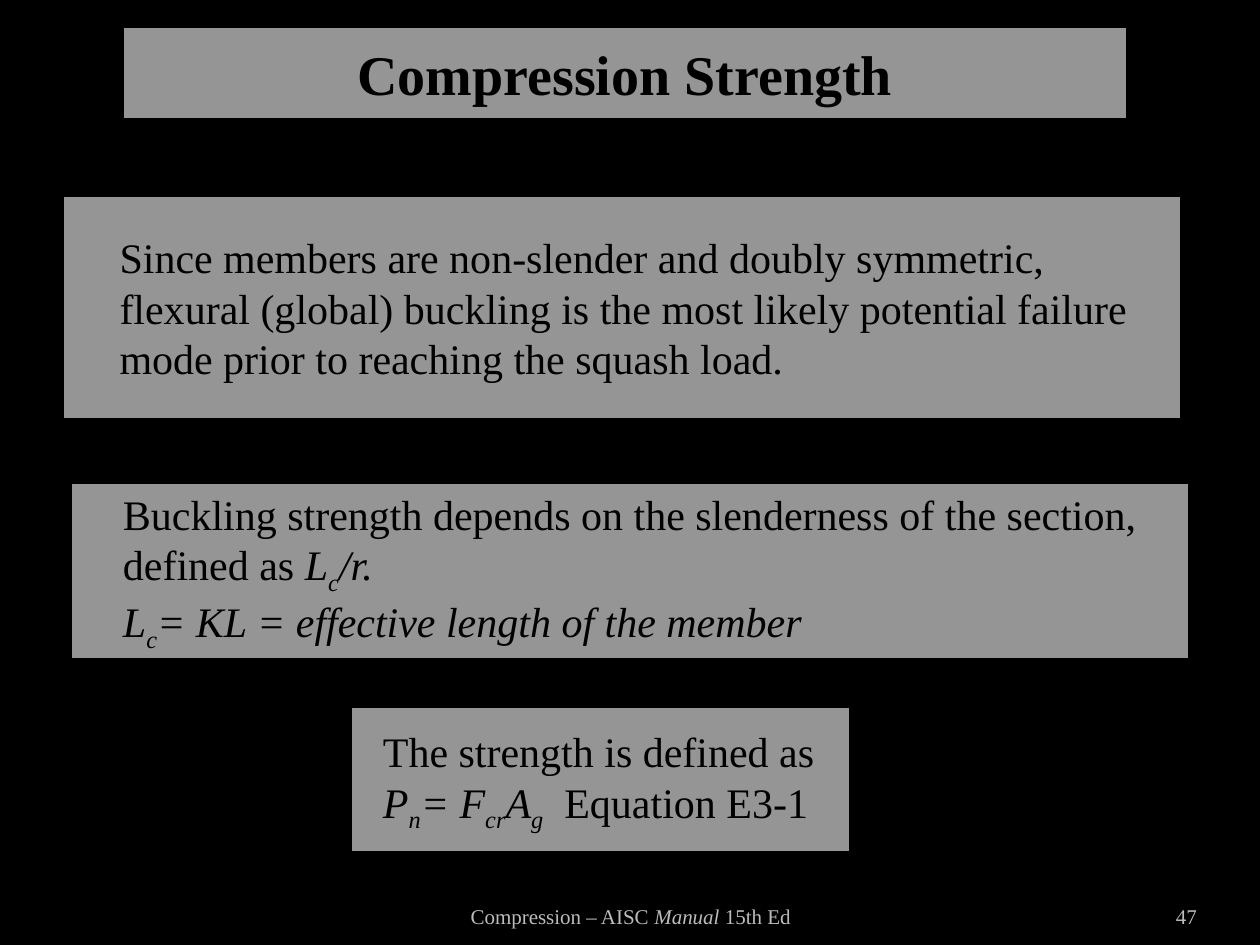
"""Build the slide on compression strength of steel members."""
from pptx import Presentation, util as u
from pptx.dml.color import RGBColor
from pptx.enum import shapes, text
from pptx.oxml import ns, xmlchemy

BLACK = RGBColor(0x00, 0x00, 0x00)
PANEL = RGBColor(0xF2, 0xF2, 0xF2)
GREY = RGBColor(0xBC, 0xBC, 0xBC)
FACE = "Times New Roman"
ALPHA = "62000"
LEFT, MID, RIGHT = text.PP_ALIGN.LEFT, text.PP_ALIGN.CENTER, text.PP_ALIGN.RIGHT

PLAIN = {"italic": False}
ITAL = {"italic": True}
SUB = {"italic": True, "base": "-25000"}

TITLE = ((2.44, 0.51, 20.32, 1.93), [[("Compression Strength", PLAIN)]])

PANELS = [
    ((1.24, 3.91, 22.61, 4.57), 1.17, [
        [("Since members are non-slender and doubly symmetric,", PLAIN)],
        [("flexural (global) buckling is the most likely potential failure "
          "mode prior to reaching the squash load.", PLAIN)],
    ]),
    ((1.4, 9.7, 22.61, 3.61), 1.08, [
        [("Buckling strength depends on the slenderness of the section, "
          "defined as ", PLAIN), ("L", ITAL), ("c", SUB), ("/r.", ITAL)],
        [("L", ITAL), ("c", SUB),
         ("= KL = effective length of the member", ITAL)],
    ]),
    ((7.04, 14.22, 10.13, 3), 0.68, [
        [("The strength is defined as", PLAIN)],
        [("P", ITAL), ("n", SUB), ("= F", ITAL), ("cr", SUB),
         ("A", ITAL), ("g", SUB), ("  Equation E3-1", PLAIN)],
    ]),
]

NOTES = [
    ((8.69, 17.83, 8.05, 1.02), MID, 0.25,
     [[("Compression – AISC ", PLAIN), ("Manual", ITAL), (" 15th Ed", PLAIN)]]),
    ((22.02, 17.83, 2.11, 1.02), RIGHT, 0, [[("47", PLAIN)]]),
]


def put(obj, vals):
    for key, val in vals.items():
        setattr(obj, key, val)


def place(shape, box):
    put(shape, dict(zip(("left", "top", "width", "height"), map(u.Cm, box))))


def write(shape, paras, align, frame, font):
    body = shape.text_frame
    put(body, {"word_wrap": True, "auto_size": text.MSO_AUTO_SIZE.NONE, **frame})
    for num, runs in enumerate(paras):
        para = body.add_paragraph() if num else body.paragraphs[0]
        para.alignment = align
        for words, style in runs:
            run = para.add_run()
            run.text = words
            put(run.font, {"name": FACE, "italic": style["italic"]})
            put(run.font, font)
            run.font.color.rgb = GREY if shape in notes else BLACK
            if "base" in style:
                run.font._element.set("baseline", style["base"])


def paint(shape):
    shape.shadow.inherit = False
    shape.fill.solid()
    shape.fill.fore_color.rgb = PANEL
    tint = shape._element.spPr.find(ns.qn("a:solidFill"))[0]
    alpha = xmlchemy.OxmlElement("a:alpha")
    alpha.set("val", ALPHA)
    tint.append(alpha)
    shape.line.color.rgb = BLACK
    shape.line.width = u.Pt(3)


deck = Presentation()
put(deck, {"slide_width": u.Cm(25.4), "slide_height": u.Cm(19.05)})
slide = deck.slides.add_slide(deck.slide_layouts[5])
slide.background.fill.solid()
slide.background.fill.fore_color.rgb = BLACK
notes = []
middle = {"vertical_anchor": text.MSO_ANCHOR.MIDDLE}

for box, inset, paras in PANELS:
    panel = slide.shapes.add_shape(shapes.MSO_SHAPE.RECTANGLE, *map(u.Cm, box))
    paint(panel)
    write(panel, paras, LEFT, {**middle, "margin_left": u.Cm(inset)},
          {"size": u.Pt(24)})

head = slide.shapes.title
place(head, TITLE[0])
paint(head)
write(head, TITLE[1], MID, middle, {"size": u.Pt(32), "bold": True})

for box, align, inset, paras in NOTES:
    note = slide.shapes.add_textbox(*map(u.Cm, box))
    notes.append(note)
    write(note, paras, align,
          {"vertical_anchor": text.MSO_ANCHOR.BOTTOM,
           "margin_left": u.Cm(inset), "margin_right": u.Cm(inset)},
          {"size": u.Pt(12)})

deck.save("out.pptx")
